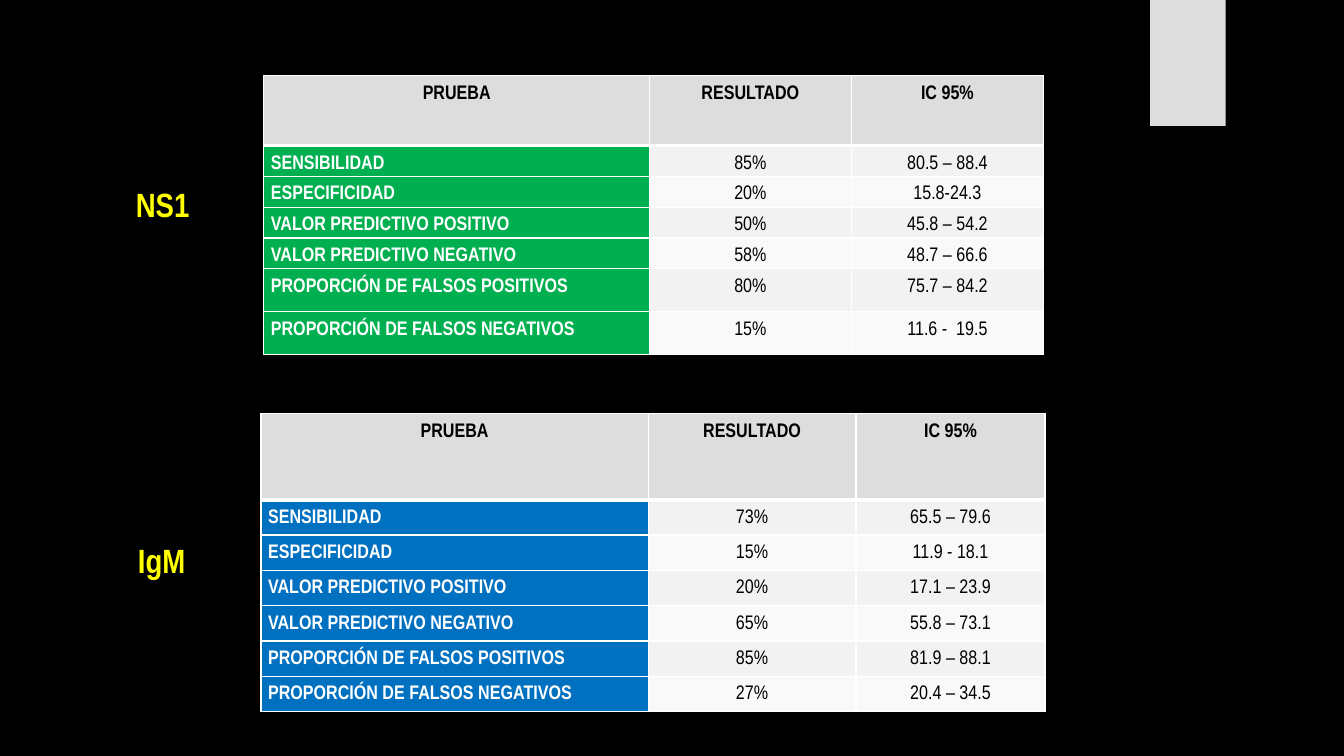
from dataclasses import dataclass

from lxml import etree
from pptx import Presentation
from pptx.dml.color import RGBColor
from pptx.enum.shapes import MSO_SHAPE
from pptx.enum.text import MSO_AUTO_SIZE, PP_ALIGN
from pptx.oxml.ns import qn
from pptx.util import Pt

RECTANGLE = MSO_SHAPE.RECTANGLE
FIT_SHAPE = MSO_AUTO_SIZE.SHAPE_TO_FIT_TEXT
LEFT, CENTER = PP_ALIGN.LEFT, PP_ALIGN.CENTER


@dataclass(frozen=True)
class Theme:
    """Colours, font and type sizes of the slide."""
    font: str = "Arial Narrow"
    background: str = "000000"
    text: str = "000000"
    light: str = "FFFFFF"
    gray: str = "DDDDDD"
    label: str = "FFFF00"
    ns1: str = "00B050"
    igm: str = "0070C0"
    bands: tuple = ("F2F2F2", "F9F9F9")
    label_size: int = 24
    cell_size: int = 14


THEME = Theme()
HEADINGS = ("PRUEBA", "RESULTADO", "IC 95%")
MEASURES = (
    "SENSIBILIDAD", "ESPECIFICIDAD",
    "VALOR PREDICTIVO POSITIVO", "VALOR PREDICTIVO NEGATIVO",
    "PROPORCIÓN DE FALSOS POSITIVOS", "PROPORCIÓN DE FALSOS NEGATIVOS",
)
NS1_VALUES = (
    ("85%", "80.5 – 88.4"), ("20%", "15.8-24.3"), ("50%", "45.8 – 54.2"),
    ("58%", "48.7 – 66.6"), ("80%", "75.7 – 84.2"), ("15%", "11.6 -  19.5"),
)
IGM_VALUES = (
    ("73%", "65.5 – 79.6"), ("15%", "11.9 - 18.1"), ("20%", "17.1 – 23.9"),
    ("65%", "55.8 – 73.1"), ("85%", "81.9 – 88.1"), ("27%", "20.4 – 34.5"),
)


def paint(fill, color):
    """Make a fill solid in the given colour."""
    fill.solid()
    fill.fore_color.rgb = RGBColor.from_string(color)


def write(frame, text, *, size, color, bold=False, align=LEFT, spacing=None, after=None):
    """Write one formatted paragraph into a text frame."""
    paragraph = frame.paragraphs[0]
    paragraph.alignment = align
    paragraph.line_spacing = spacing
    paragraph.space_after = None if after is None else Pt(after)
    run = paragraph.add_run()
    run.text = text
    run.font.name = THEME.font
    run.font.size = Pt(size)
    run.font.bold = bold
    run.font.color.rgb = RGBColor.from_string(color)


def add_borders(cell, bottom):
    """Draw white borders around a cell, with its own bottom width."""
    properties = cell._tc.get_or_add_tcPr()
    for side, width in (("lnL", 1), ("lnR", 1), ("lnT", 1), ("lnB", bottom)):
        line = etree.SubElement(properties, qn(f"a:{side}"), w=str(Pt(width)))
        fill = etree.SubElement(line, qn("a:solidFill"))
        etree.SubElement(fill, qn("a:srgbClr"), val=THEME.light)


def format_cell(cell, text, *, fill, color, bold, align, bottom=1):
    """Fill, border and write one table cell."""
    cell.margin_left = cell.margin_right = Pt(5)
    cell.margin_top = cell.margin_bottom = 0
    add_borders(cell, bottom)
    paint(cell.fill, fill)
    write(cell.text_frame, text, size=THEME.cell_size, color=color, bold=bold,
          align=align, spacing=1.5, after=10)


def add_results(slide, box, widths, heights, values, accent):
    """Build the table of results of one test in its box."""
    frame = slide.shapes.add_table(len(heights), len(widths), *map(Pt, box))
    table = frame.table
    table.first_row = table.horz_banding = False
    for column, width in zip(table.columns, widths):
        column.width = Pt(width)
    for row, height in zip(table.rows, heights):
        row.height = Pt(height)
    for column, heading in enumerate(HEADINGS):
        format_cell(table.cell(0, column), heading, fill=THEME.gray,
                    color=THEME.text, bold=True, align=CENTER, bottom=3)
    for row, (measure, results) in enumerate(zip(MEASURES, values), start=1):
        format_cell(table.cell(row, 0), measure, fill=accent,
                    color=THEME.light, bold=True, align=LEFT)
        band = THEME.bands[(row - 1) % 2]
        for column, result in enumerate(results, start=1):
            format_cell(table.cell(row, column), result, fill=band,
                        color=THEME.text, bold=False, align=CENTER)


def add_label(slide, box, test):
    """Place the name of a test beside its table."""
    label = slide.shapes.add_textbox(*map(Pt, box)).text_frame
    label.word_wrap = True
    label.auto_size = FIT_SHAPE
    write(label, test, size=THEME.label_size, color=THEME.label, bold=True)


def add_tab(slide, box):
    """Place the gray tab at the top edge."""
    tab = slide.shapes.add_shape(RECTANGLE, *map(Pt, box))
    tab.shadow.inherit = False
    paint(tab.fill, THEME.gray)
    tab.line.fill.background()


def main():
    """Build and save the slide."""
    deck = Presentation()
    deck.slide_width, deck.slide_height = Pt(960), Pt(540)
    slide = deck.slides.add_slide(deck.slide_layouts[6])
    paint(slide.background.fill, THEME.background)
    add_tab(slide, (821.5, 0, 54, 90))
    add_results(slide, (188.5, 54, 557, 199), (275.5, 144, 137.5),
                [50] + [22] * 4 + [30.6] * 2, NS1_VALUES, THEME.ns1)
    add_label(slide, (90, 127.5, 247, 36), "NS1")
    add_results(slide, (186.5, 295.5, 560, 212), (276.5, 148.5, 135),
                [61.4] + [25.1] * 6, IGM_VALUES, THEME.igm)
    add_label(slide, (91.5, 382.3, 247, 36), "IgM")
    deck.save("out.pptx")


if __name__ == "__main__":
    main()
